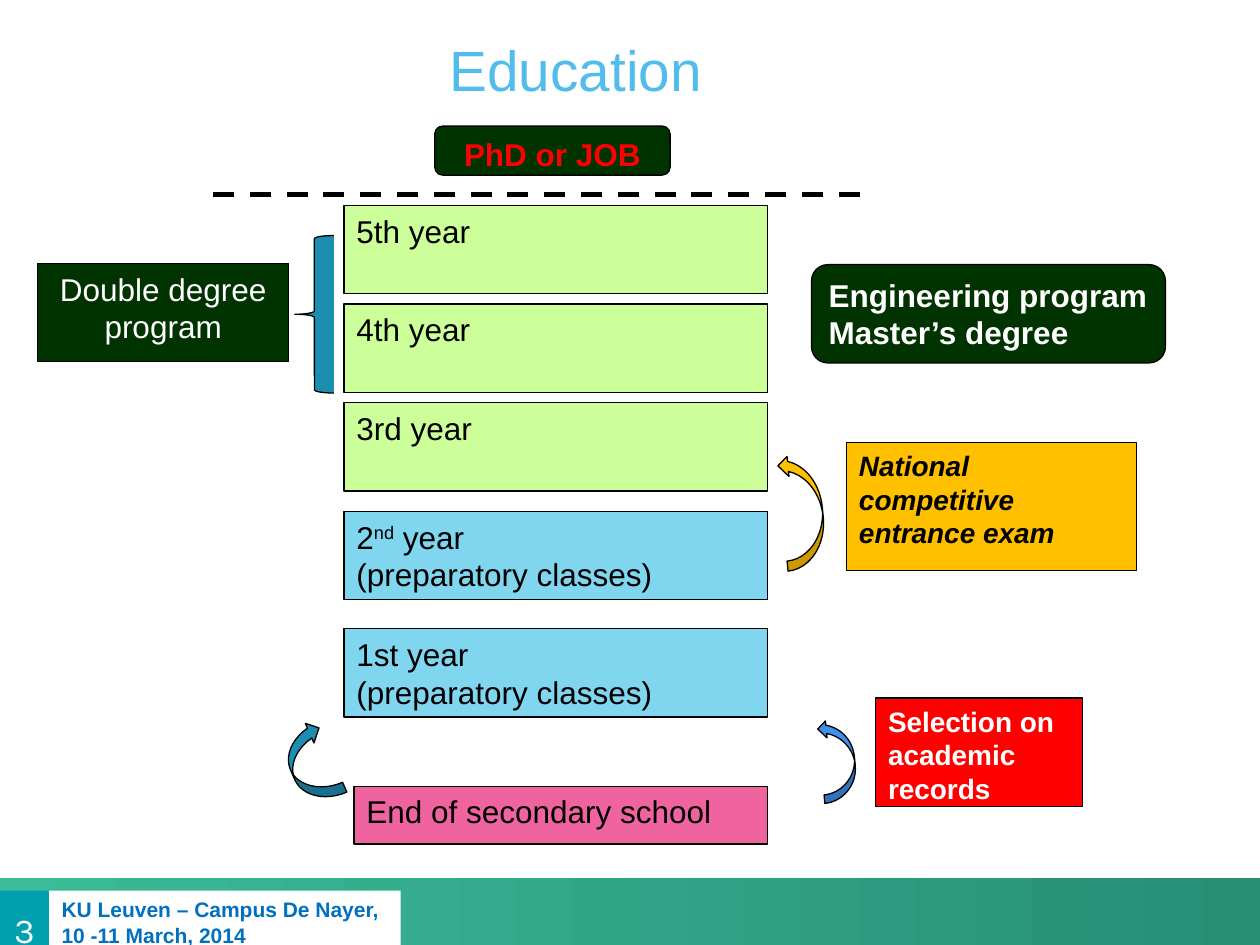
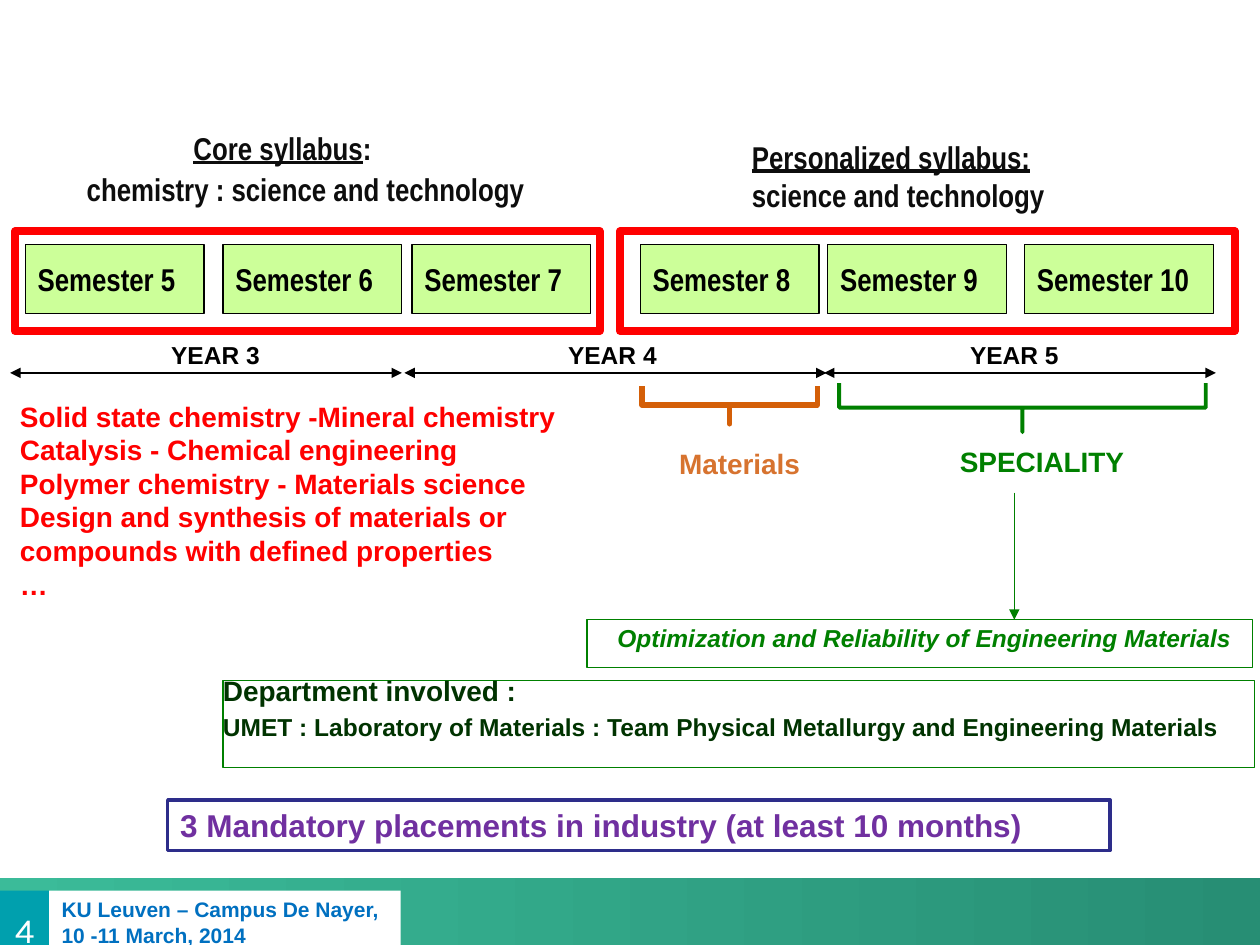
from dataclasses import dataclass, replace
from typing import NamedTuple

from lxml import etree
from pptx import Presentation
from pptx.dml.color import RGBColor
from pptx.enum import dml, shapes, text
from pptx.oxml.ns import qn
from pptx.util import Pt

COLOURS = {
    "black": "000000", "white": "FFFFFF", "ink": "0D0D0D", "red": "FF0000",
    "title": "52BDEC", "footer": "0070C0", "number": "00A0AE",
    "band start": "3BBB99", "band end": "278E74",
    "lime": "CCFF99", "sky": "81D6EF", "pink": "EF639F", "amber": "FFC000",
    "forest": "003300", "teal": "1D8DB0", "blue": "3D90EB", "green": "008000",
    "orange": "D7732F", "brace": "D45F08", "navy": "2D2D8A", "purple": "7030A0",
}
KIND = shapes.MSO_SHAPE
CENTER = text.PP_ALIGN.CENTER
MIDDLE = text.MSO_ANCHOR.MIDDLE
BOTTOM = text.MSO_ANCHOR.BOTTOM
NO_INSETS = (0, 0, 0, 0)


class Style(NamedTuple):
    size: float = 18
    colour: str = "black"
    bold: bool = False
    italic: bool = False
    font: str = "Arial"


class Span(NamedTuple):
    words: str
    underline: bool = False
    superscript: bool = False


class Line(NamedTuple):
    """One paragraph; style replaces that of its box."""
    spans: tuple[Span, ...]
    style: Style | None = None
    indent: float = 0


@dataclass(frozen=True)
class Box:
    left: float
    top: float
    width: float
    height: float
    lines: tuple[str | Line, ...] = ()
    style: Style = Style()
    kind: KIND | None = KIND.RECTANGLE  # None makes a text box
    fill: str | None = None
    outline: str | None = None
    weight: float = 0.75
    rotation: float = 0
    adjust: tuple[float, ...] = ()
    align: text.PP_ALIGN = text.PP_ALIGN.LEFT
    anchor: text.MSO_ANCHOR = text.MSO_ANCHOR.TOP
    insets: tuple[float, float, float, float] = (7.2, 3.6, 7.2, 3.6)
    wrap: bool = True
    spacing: float = 1
    before: float = 0


@dataclass(frozen=True)
class Stroke:
    x1: float
    y1: float
    x2: float
    y2: float
    colour: str = "black"
    weight: float = 0.75
    dash: bool = False
    ends: tuple[str, ...] = ()


def rgb(name: str) -> RGBColor:
    return RGBColor.from_string(COLOURS[name])


def set_font(font, style: Style) -> None:
    font.name, font.size = style.font, Pt(style.size)
    font.bold, font.italic = style.bold, style.italic
    font.color.rgb = rgb(style.colour)


def write(frame, box: Box) -> None:
    frame.word_wrap = box.wrap
    frame.vertical_anchor = box.anchor
    (frame.margin_left, frame.margin_top,
     frame.margin_right, frame.margin_bottom) = map(Pt, box.insets)
    for index, line in enumerate(box.lines):
        if isinstance(line, str):
            line = Line((Span(line),))
        para = frame.add_paragraph() if index else frame.paragraphs[0]
        para.alignment = box.align
        para.line_spacing = box.spacing
        para.space_before = Pt(box.before if index else 0)
        if line.indent:
            para._p.get_or_add_pPr().set("marL", str(Pt(line.indent)))
        set_font(para.font, line.style or box.style)
        for span in line.spans:
            run = para.add_run()
            run.text = span.words
            if span.underline:
                run.font.underline = True
            if span.superscript:
                run._r.get_or_add_rPr().set("baseline", "30000")


def draw_box(page, box: Box):
    place = [Pt(value) for value in (box.left, box.top, box.width, box.height)]
    if box.kind is None:
        shape = page.shapes.add_textbox(*place)
    else:
        shape = page.shapes.add_shape(box.kind, *place)
        shape.shadow.inherit = False
        shape.rotation = box.rotation
        for index, value in enumerate(box.adjust):
            shape.adjustments[index] = value
        if box.fill:
            shape.fill.solid()
            shape.fill.fore_color.rgb = rgb(box.fill)
        else:
            shape.fill.background()
        if box.outline:
            shape.line.color.rgb = rgb(box.outline)
            shape.line.width = Pt(box.weight)
        else:
            shape.line.fill.background()
    if box.lines:
        write(shape.text_frame, box)
    return shape


def draw_stroke(page, stroke: Stroke) -> None:
    connector = page.shapes.add_connector(
        shapes.MSO_CONNECTOR.STRAIGHT,
        Pt(stroke.x1), Pt(stroke.y1), Pt(stroke.x2), Pt(stroke.y2))
    connector.line.color.rgb = rgb(stroke.colour)
    connector.line.width = Pt(stroke.weight)
    if stroke.dash:
        connector.line.dash_style = dml.MSO_LINE.DASH
    for end in stroke.ends:
        tip = etree.SubElement(connector.line._get_or_add_ln(), qn(f"a:{end}"))
        tip.set("type", "triangle")
    etree.SubElement(connector._element.spPr, qn("a:effectLst"))


def draw_footer(page, number: int) -> None:
    band = draw_box(page, Box(0, 501.8, 720, 43.2))
    band.fill.gradient()
    band.fill.gradient_angle = 0
    for stop, name in zip(band.fill.gradient_stops, ("band start", "band end")):
        stop.color.rgb = rgb(name)
    draw_box(page, Box(0, 509, 28.1, 36, (str(number),),
                       Style(20, "white", font="Karla"), fill="number",
                       align=CENTER, anchor=MIDDLE, insets=(0, 8.6, 0, 0)))
    draw_box(page, Box(28.1, 509, 200.9, 36,
                       ("KU Leuven – Campus De Nayer,", "10 -11 March, 2014"),
                       Style(12, "footer", bold=True), fill="white"))


def add_page(deck, number: int, items: list[Box | Stroke]) -> None:
    page = deck.slides.add_slide(deck.slide_layouts[6])
    draw_footer(page, number)
    for item in items:
        if isinstance(item, Box):
            draw_box(page, item)
        else:
            draw_stroke(page, item)


def education() -> list[Box | Stroke]:
    year = Box(196.6, 117.4, 241.9, 50.4, fill="lime", outline="black")
    preparatory = "(preparatory classes)"
    second = Line((Span("2"), Span("nd", superscript=True), Span(" year")))
    label = Box(21.6, 150.5, 143.3, 56.2, ("Double degree program",),
                Style(18, "white"), fill="forest", outline="black", align=CENTER)
    badge = replace(label, kind=KIND.ROUNDED_RECTANGLE, adjust=(0.167,))
    bold_white = Style(18, "white", bold=True)
    curve = Box(425.5, 280.8, 66.2, 23, kind=KIND.CURVED_UP_ARROW, fill="amber",
                outline="black", rotation=264.5, adjust=(0.25, 0.5, 0.25))
    return [
        Box(257, 3.6, 153.4, 55.4, ("Education",), Style(32.4, "title"), None,
            anchor=BOTTOM, insets=NO_INSETS),
        *(replace(year, top=year.top + 56.4 * step, lines=(name,))
          for step, name in enumerate(("5th year", "4th year", "3rd year"))),
        replace(year, top=292.3, fill="sky", lines=(second, preparatory)),
        replace(year, top=359.3, fill="sky", lines=("1st year", preparatory)),
        replace(badge, left=463.7, top=151.2, width=202.3,
                lines=("Engineering program", "Master’s degree"),
                style=bold_white, align=text.PP_ALIGN.LEFT),
        Box(202.3, 449.3, 236.2, 33.1, ("End of secondary school",),
            fill="pink", outline="black"),
        replace(curve, left=154.8, top=424.1, width=46.1, height=24.5,
                kind=KIND.CURVED_DOWN_ARROW, fill="teal", rotation=246.5),
        curve,
        Box(483.8, 252.7, 165.6, 73.4, ("National competitive entrance exam",),
            Style(16, bold=True, italic=True), fill="amber", outline="black"),
        replace(curve, left=455, top=424.8, width=47.5, height=19.4, fill="blue"),
        Box(500.4, 398.9, 118.1, 61.9, ("Selection on academic records",),
            Style(16, "white", bold=True), fill="red", outline="black"),
        Box(168.5, 134.6, 22.3, 90, kind=KIND.LEFT_BRACE, fill="teal",
            outline="black", adjust=(0.083, 0.5)),
        label,
        replace(badge, left=248.4, top=72, width=134.6, height=28.1,
                lines=("PhD or JOB",), style=Style(18, "red", bold=True)),
        Stroke(121.7, 111.2, 496.1, 111.2, weight=3, dash=True),
    ]


def syllabus() -> list[Box | Stroke]:
    narrow = Style(18, "ink", bold=True, font="Arial Narrow")
    semester = Box(0, 139.7, 102.2, 39.6, style=narrow._replace(colour="black"),
                   fill="lime", outline="black", anchor=MIDDLE)
    semester_lefts = (14.4, 127.4, 235.4, 365.8, 473, 585.4)
    frame = Box(8.6, 132.2, 334.1, 56.9, outline="red", weight=4.5)
    brace = Box(406.1, 181.4, 21.6, 100.1, kind=KIND.RIGHT_BRACE,
                outline="brace", weight=3, rotation=90, adjust=(0, 0.5))
    core = Line((Span("Core syllabus", underline=True), Span(":")), indent=61)
    personal = Line((Span("Personalized syllabus:", underline=True),))
    years = ((5.8, 229.7, 90.7), (231.1, 472.3, 317.5), (470.9, 694.8, 547.2))
    items = [
        Box(335.5, 354.2, 380.2, 27.4,
            ("Optimization and Reliability of Engineering Materials",),
            Style(14, "green", bold=True, italic=True), outline="green",
            insets=(17.3, 2, 0, 0)),
        Box(42.5, 77, 266.4, 46.8, (core, "chemistry : science and technology"),
            narrow, None, spacing=0.65, before=9.5),
        Box(422.6, 82.8, 204.5, 45.4, (personal, "science and technology"),
            narrow, None, spacing=0.6, before=9),
        *(replace(semester, left=left, width=108 if number == 10 else semester.width,
                  lines=(f"Semester {number}",))
          for number, left in enumerate(semester_lefts, 5)),
        Box(335.5, 258.5, 174.2, 19.4, ("Materials",),
            Style(16, "orange", bold=True), None, align=CENTER, spacing=0.6),
        Box(541.4, 252.7, 118.8, 24.5, ("SPECIALITY",),
            Style(16, "green", bold=True), None, spacing=0.9),
        Stroke(579.6, 281.5, 579.6, 354.2, "green", ends=("tailEnd",)),
        replace(brace, left=570.2, top=128.2, width=28.1, height=209.5,
                outline="green", weight=2.25),
        frame,
        replace(frame, left=354.2, width=351.4),
    ]
    for number, (start, end, label_left) in enumerate(years, 3):
        items += [
            Stroke(start, 213.1, end, 213.1, ends=("headEnd", "tailEnd")),
            Box(label_left, 190.8, 65.5, 24.5, (f"YEAR {number}",),
                Style(14, bold=True), None, wrap=False),
        ]
    team = "UMET : Laboratory of Materials : Team Physical Metallurgy and Engineering Materials"
    return items + [
        brace,
        Box(4.3, 224.6, 330.5, 123.8,
            ("Solid state chemistry -Mineral chemistry",
             "Catalysis - Chemical engineering",
             "Polymer chemistry - Materials science",
             "Design and synthesis of materials or compounds with defined properties",
             "…"),
            Style(16, "red", bold=True), None),
        Box(95.8, 457.2, 538.6, 28.8,
            ("3 Mandatory placements in industry (at least 10 months)",),
            Style(18, "purple", bold=True), fill="white", outline="navy", weight=2),
        Box(127.4, 388.8, 589.7, 49.7,
            ("Department involved :",
             Line((Span(team),), Style(14, "forest", bold=True))),
            Style(16, "forest", bold=True), outline="green",
            insets=NO_INSETS, spacing=0.8, before=5.8),
    ]


def main() -> None:
    deck = Presentation()
    deck.slide_width, deck.slide_height = Pt(720), Pt(540)
    for number, items in enumerate((education(), syllabus()), 3):
        add_page(deck, number, items)
    deck.save("out.pptx")


if __name__ == "__main__":
    main()
